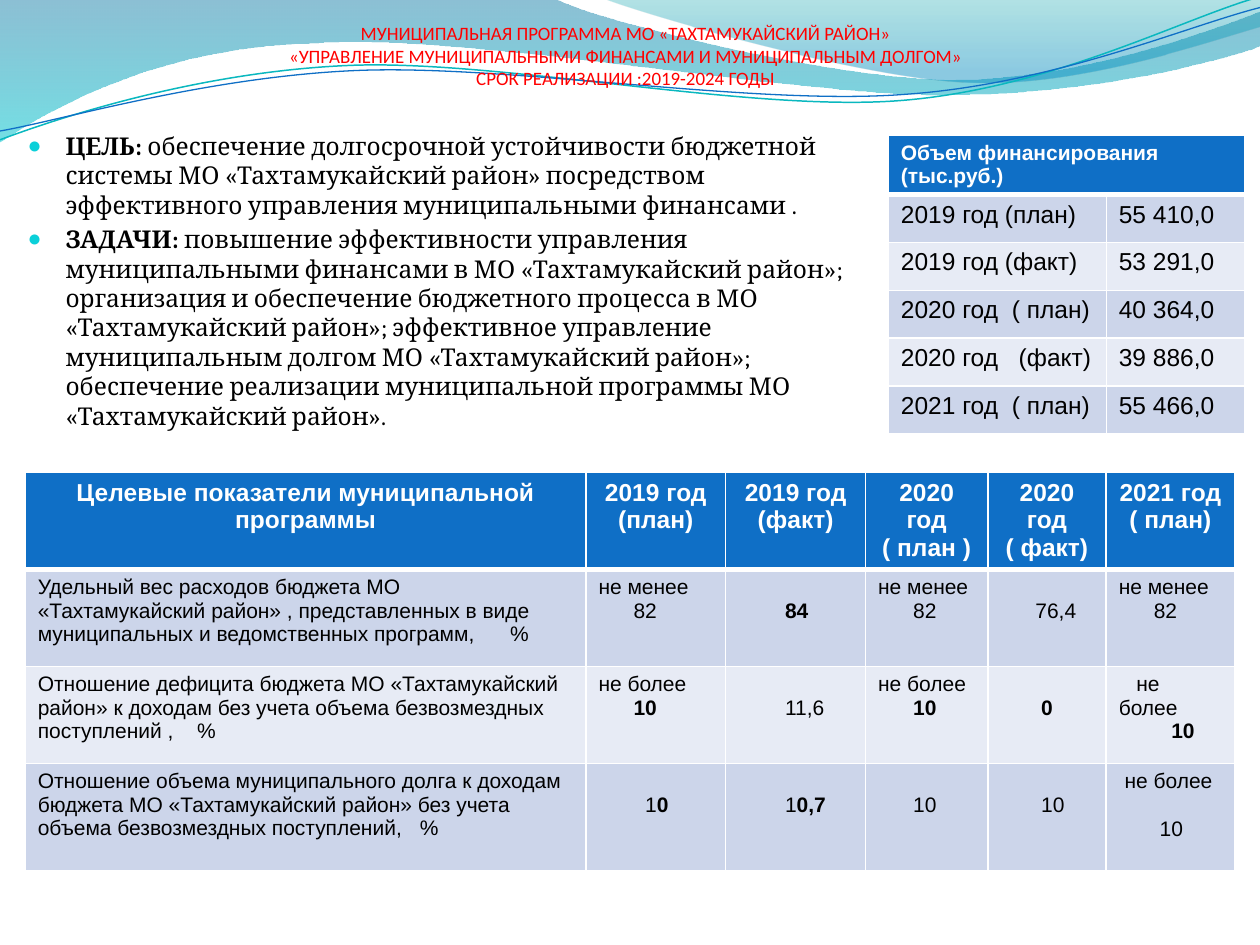
from lxml import etree
from pptx import Presentation
from pptx.dml.color import RGBColor
from pptx.enum.text import MSO_ANCHOR, MSO_AUTO_SIZE, PP_ALIGN
from pptx.oxml.ns import qn
from pptx.util import Inches, Pt

TOP, NONE = MSO_ANCHOR.TOP, MSO_AUTO_SIZE.NONE
LEFT, MID = PP_ALIGN.LEFT, PP_ALIGN.CENTER

THEME = {
    "head": "0F6FC6", "bands": ("CCD5EA", "E7EBF5"), "white": "FFFFFF",
    "black": "000000", "red": "FF0000", "dot": "0BD0D9",
    "title": 10.8, "body": 14, "big": 14, "small": 12, "space": 0.278,
    "sans": "Arial", "serif": "Cambria", "top": "Calibri",
}

TITLE = [
    "МУНИЦИПАЛЬНАЯ ПРОГРАММА МО «ТАХТАМУКАЙСКИЙ РАЙОН»",
    "«УПРАВЛЕНИЕ МУНИЦИПАЛЬНЫМИ ФИНАНСАМИ И МУНИЦИПАЛЬНЫМ ДОЛГОМ»",
    "СРОК РЕАЛИЗАЦИИ :2019-2024 ГОДЫ",
]
GOALS = [
    ("ЦЕЛЬ: ", "обеспечение долгосрочной устойчивости бюджетной системы МО «Тахтамукайский район» "
     "посредством эффективного управления муниципальными финансами ."),
    ("ЗАДАЧИ: ", "повышение эффективности управления муниципальными финансами в МО «Тахтамукайский район»; "
     "организация и обеспечение бюджетного процесса в МО «Тахтамукайский район»; эффективное управление "
     "муниципальным долгом МО «Тахтамукайский район»; обеспечение реализации муниципальной программы "
     "МО «Тахтамукайский район»."),
]
# "^n^" is one space set n spaces wide.
FUNDS = [
    ["Объем финансирования (тыс.руб.)", ""],
    ["2019 год (план)", "55 410,0"],
    ["2019 год (факт)", "53 291,0"],
    ["2020 год^2^( план)", "40 364,0"],
    ["2020 год^3^(факт)", "39 886,0"],
    ["2021 год^2^( план)", "55 466,0"],
]
# Cell lines: (indent in spaces, lines skipped above, text); text after "|" is bold.
LESS = [(0, 0, "не менее"), (6, 0, "82")]
MORE = [(0, 0, "не более"), (6, 0, "|10")]
MARKS = [
    ["Целевые показатели муниципальной программы", "2019 год (план)", "2019 год (факт)",
     [(0, 0, "2020 год"), (0, 0, "( план )")], [(0, 0, "2020 год"), (0, 0, "( факт)")],
     [(0, 0, "2021 год"), (0, 0, "( план)")]],
    ["Удельный вес расходов бюджета МО «Тахтамукайский район» , представленных в виде "
     "муниципальных и ведомственных программ,^6^%",
     LESS, [(8, 1, "|84")], LESS, [(6, 1, "76,4")], LESS],
    ["Отношение дефицита бюджета МО «Тахтамукайский район» к доходам без учета объема "
     "безвозмездных поступлений ,^4^%",
     MORE, [(8, 1, "11,6")], MORE, [(7, 1, "|0")], [(3, 0, "не более"), (9, 0, "|10")]],
    ["Отношение объема муниципального долга к доходам бюджета МО «Тахтамукайский район» "
     "без учета объема безвозмездных поступлений,^3^%",
     [(8, 1, "1|0")], [(8, 1, "1|0,7")], [(6, 1, "10")], [(7, 1, "10")],
     [(1, 0, "не более"), (7, 1, "10")]],
]

FILLS = [
    ([(0, 0), (4.4, -0.01), ((4.76, 0.17), (6.64, 0.63), (7.58, 0.63)),
      ((8.53, 0.63), (9.58, 0.26), (10, 0.09)), (10.01, 0.36),
      ((9.83, 0.44), (8.7, 0.76), (7.46, 0.75)), ((6.22, 0.75), (3.82, 0.28), (2.57, 0.34)),
      ((1.29, 0.36), (0.46, 0.83), (-0.01, 1.13))],
     [(0, "0074A1", 45), (1, "00C6CF", 55)]),
    ([(4.79, -0.01), ((5.09, 0.11), (6.82, 0.62), (7.69, 0.65)),
      ((8.56, 0.69), (9.61, 0.32), (10, 0.21)), (10, 0)],
     [(0, "00A1A9", 30), (0.8, "008BBF", 45)]),
]
LINES = [
    ([(0, 1.11), ((0.48, 0.93), (1.58, 0.57), (2.77, 0.52)),
      ((3.95, 0.47), (5.93, 0.89), (7.13, 0.8)), ((8.33, 0.71), (9.38, 0.15), (9.98, -0.02))],
     "0AB8BF", 0.85),
    ([(0, 1.04), ((0.47, 0.96), (1.64, 0.61), (2.83, 0.56)),
      ((4.03, 0.51), (5.97, 0.84), (7.17, 0.75)), ((8.36, 0.67), (9.41, 0.21), (10, 0.06))],
     "0F6FC6", 0.75),
]


def tint(hue):
    return RGBColor.from_string(hue)


def apply(item, **vals):
    for key, val in vals.items():
        setattr(item, key, val)


def node(root, tag, **vals):
    return etree.SubElement(root, qn(tag), {key: str(val) for key, val in vals.items()})


def write(para, text, face, size, hue, bold=False):
    run = para.add_run()
    run.text = text
    apply(run.font, name=face, size=Pt(size), bold=bold)
    run.font.color.rgb = tint(hue)
    return run


def lines(frame, count):
    while len(frame.paragraphs) < count:
        frame.add_paragraph()
    return frame.paragraphs


def place(shape, box):
    apply(shape, **dict(zip(("left", "top", "width", "height"), map(Inches, box))))


def wave(shapes, steps, close):
    groups = [step if len(step) == 3 else (step,) for step in steps]
    pts = [(Inches(x), Inches(y)) for group in groups for x, y in group]
    pen = shapes.build_freeform(*pts[0])
    pen.add_line_segments(pts[1:], close=close)
    shape = pen.convert_to_shape()
    shape.shadow.inherit = False
    legs = iter(list(shape._element.iter(qn("a:lnTo"))))
    for group in groups[1:]:
        leg = next(legs)
        if len(group) == 3:
            curve = etree.Element(qn("a:cubicBezTo"))
            leg.addprevious(curve)
            for part in (leg, next(legs), next(legs)):
                curve.append(part[0])
                part.getparent().remove(part)
    return shape


def edge(cell, top, base):
    box = cell._tc.get_or_add_tcPr()
    for side, wide in zip("LRTB", (1, 1, top, base)):
        line = node(box, f"a:ln{side}", w=Pt(wide))
        node(node(line, "a:solidFill"), "a:srgbClr", val=THEME["white"])


def put(para, text, size, hue, bold):
    for i, part in enumerate(text.split("^")):
        run = write(para, " " if i % 2 else part, THEME["sans"], size, hue, bold)
        if i % 2:
            gap = (int(part) - 1) * size * THEME["space"]
            run._r.get_or_add_rPr().set("spc", str(round(gap * 100)))


def fill_cell(cell, spec, size, hue, bold, align):
    spec = [(0, 0, spec)] if isinstance(spec, str) else spec
    pitch = size * 1.15
    cell.margin_top = Inches(0.05) + Pt(spec[0][1] * pitch)
    for i, (para, (pad, drop, text)) in enumerate(zip(lines(cell.text_frame, len(spec)), spec)):
        para.alignment = align
        if pad:
            para._p.get_or_add_pPr().set("indent", str(Pt(pad * size * THEME["space"])))
        if i and drop:
            para.space_before = Pt(drop * pitch)
        for part, strong in zip(text.split("|"), (bold, True)):
            if part:
                put(para, part, size, hue, strong)


def grid(shapes, at, cols, rows, data, head, body, align):
    table = shapes.add_table(len(rows), len(cols), *map(Inches, (*at, sum(cols), sum(rows)))).table
    for col, wide in zip(table.columns, cols):
        col.width = Inches(wide)
    for r, (row, tall, cells) in enumerate(zip(table.rows, rows, data)):
        row.height = Inches(tall)
        for cell, spec in zip(row.cells, cells):
            edge(cell, 3 if r == 1 else 1, 1 if r else 3)
            cell.fill.solid()
            cell.fill.fore_color.rgb = tint(THEME["bands"][(r - 1) % 2] if r else THEME["head"])
            look = (body, THEME["black"], False, LEFT) if r else (head, THEME["white"], True, align)
            fill_cell(cell, spec, *look)
    return table


def main():
    deck = Presentation()
    apply(deck, slide_width=Inches(10), slide_height=Inches(7.5))
    slide = deck.slides.add_slide(deck.slide_layouts[1])
    shapes = slide.shapes
    title, body = slide.placeholders

    for steps, stops in FILLS:
        shape = wave(shapes, steps, True)
        shape.line.fill.background()
        shape.fill.gradient()
        shape.fill.gradient_angle = 270
        for stop, (pos, hue, _) in zip(shape.fill.gradient_stops, stops):
            stop.position = pos
            stop.color.rgb = tint(hue)
        for mark, (_, _, alpha) in zip(shape._element.spPr.iter(qn("a:srgbClr")), stops):
            node(mark, "a:alpha", val=alpha * 1000)
    for steps, hue, wide in LINES:
        shape = wave(shapes, steps, False)
        shape.fill.background()
        shape.line.color.rgb = tint(hue)
        shape.line.width = Pt(wide)

    shapes._spTree.append(title._element)
    place(title, (0.28, 0.13, 9.37, 0.94))
    apply(title.text_frame, auto_size=NONE, word_wrap=True, vertical_anchor=TOP,
          margin_left=0, margin_right=0, margin_top=Inches(0.04), margin_bottom=0)
    for para, text in zip(lines(title.text_frame, len(TITLE)), TITLE):
        apply(para, alignment=MID, space_before=Pt(0))
        write(para, text, THEME["top"], THEME["title"], THEME["red"])

    funds = grid(shapes, (7.05, 1.07), [1.73, 1.1], [0.47] + [0.38] * 5, FUNDS,
                 THEME["small"], THEME["big"], LEFT)
    funds.cell(0, 0).merge(funds.cell(0, 1))

    shapes._spTree.append(body._element)
    place(body, (0.12, 0.99, 6.77, 2.52))
    apply(body.text_frame, auto_size=NONE, word_wrap=True, vertical_anchor=TOP)
    for para, parts in zip(lines(body.text_frame, len(GOALS)), GOALS):
        apply(para, alignment=LEFT, space_before=Pt(2.8), line_spacing=1.0)
        form = para._p.get_or_add_pPr()
        form.set("marL", str(Inches(0.3)))
        form.set("indent", str(Inches(-0.3)))
        node(node(form, "a:buClr"), "a:srgbClr", val=THEME["dot"])
        node(form, "a:buSzPct", val=95000)
        node(form, "a:buChar", char="●")
        for text, bold in zip(parts, (True, False)):
            write(para, text, THEME["serif"], THEME["body"], THEME["black"], bold)

    grid(shapes, (0.2, 3.75), [4.45, 1.11, 1.11, 0.97, 0.94, 1.02], [0.77] * 3 + [0.85],
         MARKS, THEME["big"], THEME["small"], MID)
    deck.save("out.pptx")


if __name__ == "__main__":
    main()
